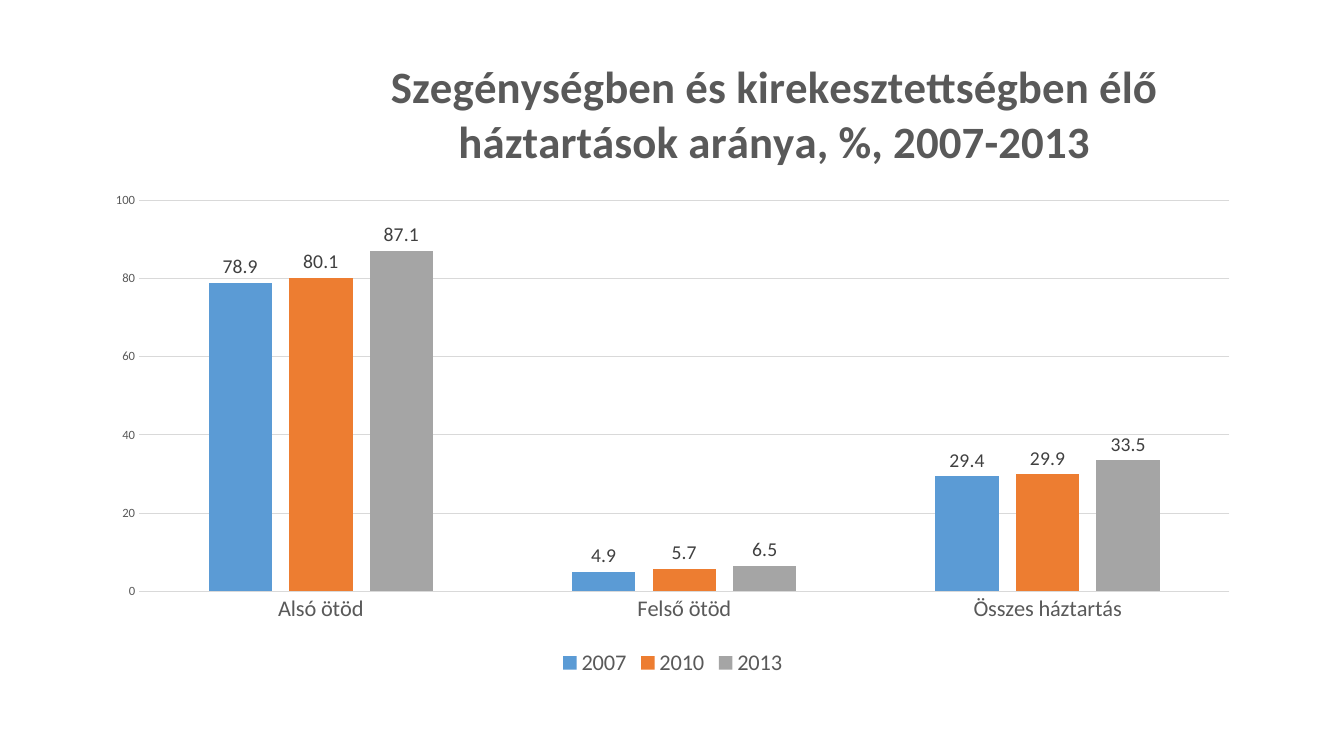
"""Builds a slide with a clustered column chart of household poverty rates."""
from lxml import etree
from pptx import Presentation, util as u
from pptx.chart.data import CategoryChartData
from pptx.dml.color import RGBColor
from pptx.enum import chart as ch
from pptx.oxml import ns

W, H = u.Inches(13.33), u.Inches(7.5)
COLORS = {"text": "595959", "label": "404040", "grid": "D9D9D9",
          "2007": "5B9BD5", "2010": "ED7D31", "2013": "A5A5A5"}
TITLE = "Szegénységben és kirekesztettségben élő háztartások aránya, %, 2007-2013"
CATEGORIES = ["Alsó ötöd", "Felső ötöd", "Összes háztartás"]
VALUES = {"2007": (78.9, 4.9, 29.4), "2010": (80.1, 5.7, 29.9), "2013": (87.1, 6.5, 33.5)}


def set_attrs(obj, values):
    """Set attributes of an object from a dict."""
    for name, value in values.items():
        setattr(obj, name, value)


def set_font(font, size, color="text", bold=False):
    """Format a font."""
    set_attrs(font, {"name": "Calibri", "size": u.Pt(size), "bold": bold})
    font.color.rgb = RGBColor.from_string(COLORS[color])


def set_line(line):
    """Give a line the thin grid style."""
    line.color.rgb = RGBColor.from_string(COLORS["grid"])
    line.width = u.Pt(0.75)


def set_layout(parent, after, **shares):
    """Place a chart part by shares of the chart's size."""
    for old in parent.findall(ns.qn("c:layout")):
        parent.remove(old)
    layout = etree.Element(ns.qn("c:layout"))
    manual = etree.SubElement(layout, ns.qn("c:manualLayout"))
    if "w" in shares:
        etree.SubElement(manual, ns.qn("c:layoutTarget")).set("val", "inner")
    for mode in ("xMode", "yMode"):
        etree.SubElement(manual, ns.qn(f"c:{mode}")).set("val", "edge")
    for name, share in shares.items():
        etree.SubElement(manual, ns.qn(f"c:{name}")).set("val", str(share))
    if after is None:
        parent.insert(0, layout)
    else:
        after.addnext(layout)


def add_columns(s):
    """Add the column chart and return it."""
    data = CategoryChartData(number_format="0.0")
    data.categories = CATEGORIES
    for name, values in VALUES.items():
        data.add_series(name, values)
    return s.shapes.add_chart(ch.XL_CHART_TYPE.COLUMN_CLUSTERED, int(W * 0.069),
                              int(H * 0.053), int(W * 0.863), int(H * 0.848), data).chart


def format_title(chart):
    """Write and place the chart title."""
    tf = chart.chart_title.text_frame
    tf.text = TITLE
    set_font(tf.paragraphs[0].runs[0].font, 32, bold=True)
    title = chart.chart_title._element
    set_layout(title, title.find(ns.qn("c:tx")), x=0.25, y=0.01)
    chart.chart_title.include_in_layout = False


def format_axes(chart):
    """Format both axes and the gridlines."""
    cat, val = chart.category_axis, chart.value_axis
    for axis, size in ((cat, 16), (val, 9)):
        set_attrs(axis, {"major_tick_mark": ch.XL_TICK_MARK.NONE,
                         "minor_tick_mark": ch.XL_TICK_MARK.NONE})
        set_font(axis.tick_labels.font, size)
    set_attrs(val, {"minimum_scale": 0, "maximum_scale": 100, "major_unit": 20})
    set_attrs(val.tick_labels, {"number_format": "0", "number_format_is_linked": False})
    val.format.line.fill.background()
    set_line(cat.format.line)
    set_line(val.major_gridlines.format.line)


def format_series(chart):
    """Colour the columns and label them with their values."""
    plot = chart.plots[0]
    set_attrs(plot, {"gap_width": 219, "overlap": -27, "vary_by_categories": False})
    for series in plot.series:
        series.format.fill.solid()
        series.format.fill.fore_color.rgb = RGBColor.from_string(COLORS[series.name])
        labels = series.data_labels
        set_attrs(labels, {"show_value": True, "number_format": "0.0",
                           "number_format_is_linked": False,
                           "position": ch.XL_LABEL_POSITION.OUTSIDE_END})
        set_font(labels.font, 14, "label")


def format_legend(chart):
    """Put the legend under the plot."""
    chart.has_legend = True
    set_attrs(chart.legend, {"position": ch.XL_LEGEND_POSITION.BOTTOM,
                             "include_in_layout": False})
    set_font(chart.legend.font, 16)


def main():
    """Build and save the slide."""
    prs = Presentation()
    set_attrs(prs, {"slide_width": W, "slide_height": H})
    s = prs.slides.add_slide(prs.slide_layouts[6])
    chart = add_columns(s)
    for step in (format_title, format_axes, format_series, format_legend):
        step(chart)
    area = chart._chartSpace.chart.plotArea
    set_layout(area, None, x=0.04, y=0.25, w=0.94, h=0.61)
    prs.save("out.pptx")


if __name__ == "__main__":
    main()
